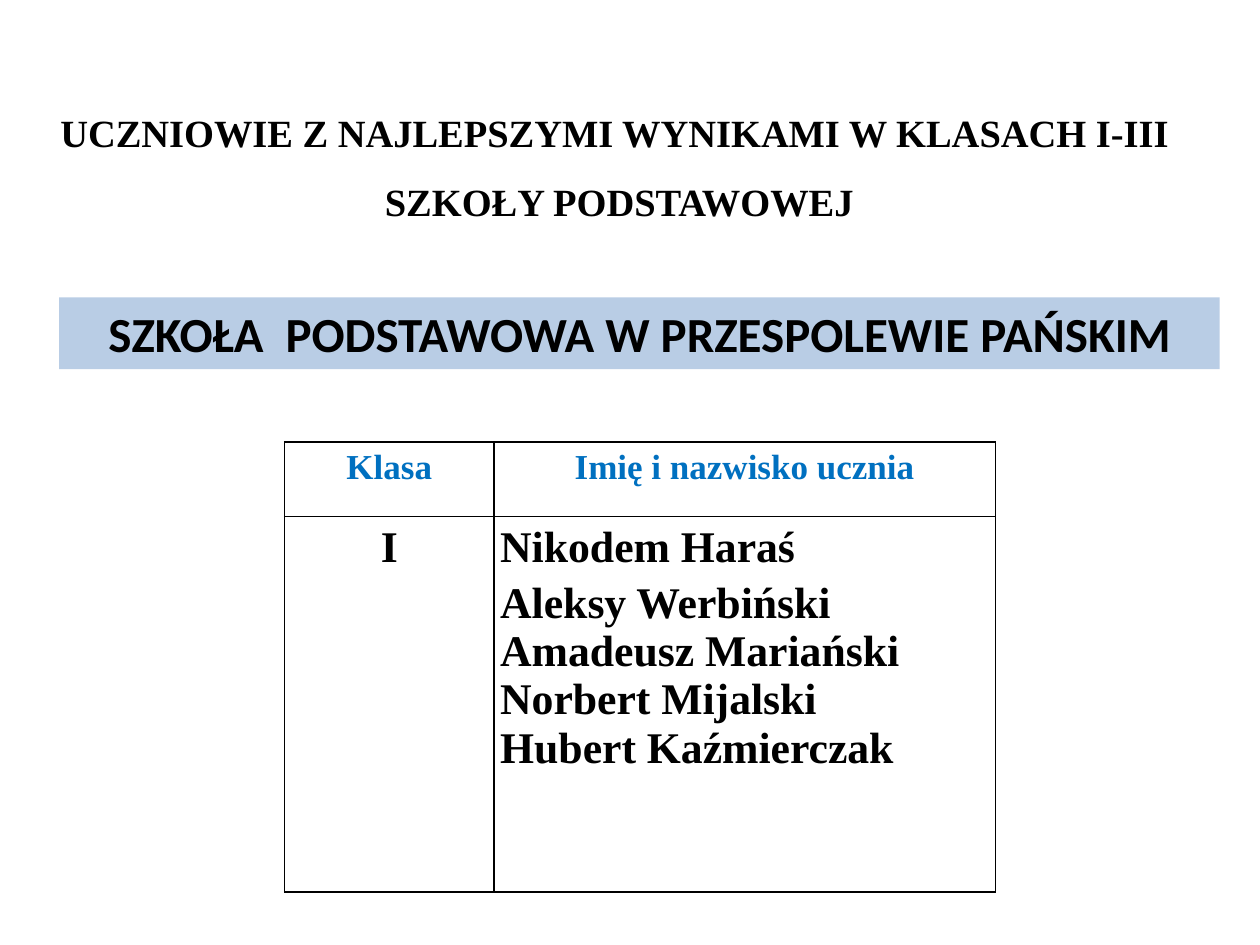
"""Build a slide listing the best pupils of a primary school."""
from lxml import etree
from pptx import Presentation
from pptx import util as u
from pptx.dml.color import RGBColor
from pptx.enum import shapes, text
from pptx.oxml.ns import qn

WIDTH, HEIGHT = 10, 7.5
SERIF = "Times New Roman"
BLACK, BLUE, BAND = "000000", "0070C0", "B9CDE5"
CENTER, LEFT = text.PP_ALIGN.CENTER, text.PP_ALIGN.LEFT

TITLE = ["UCZNIOWIE Z NAJLEPSZYMI WYNIKAMI W KLASACH I-III ", "SZKOŁY PODSTAWOWEJ"]
SCHOOL = ["SZKOŁA  PODSTAWOWA W PRZESPOLEWIE PAŃSKIM"]
HEADERS = ["Klasa", "Imię i nazwisko ucznia"]
GRADE = "I"
PUPILS = ["Nikodem Haraś", "Aleksy Werbiński", "Amadeusz Mariański",
          "Norbert Mijalski", "Hubert Kaźmierczak"]
PUPIL_SPACING = [1.15, 1.15, 1, 1, 1]

TITLE_BOX = (0.31, 0.52, 9.21, 1.31)
SCHOOL_BOX = (0.47, 2.36, 9.21, 0.57)
TABLE_ORIGIN = (2.26, 3.51)
COLUMNS, ROWS = (1.66, 3.98), (0.59, 2.98)


def color(value):
    return RGBColor.from_string(value)


def inches(values):
    return [u.Inches(value) for value in values]


def write(frame, lines, size, spacing, name=SERIF, fill=BLACK, align=CENTER):
    frame.text = "\n".join(lines)
    for paragraph, gap in zip(frame.paragraphs, spacing):
        paragraph.alignment, paragraph.line_spacing = align, gap
        font = paragraph.runs[0].font
        for key, value in {"name": name, "size": u.Pt(size), "bold": True}.items():
            setattr(font, key, value)
        font.color.rgb = color(fill)


def add_borders(cell):
    properties = cell._tc.get_or_add_tcPr()
    for index, side in enumerate(("lnL", "lnR", "lnT", "lnB")):
        line = etree.Element(qn(f"a:{side}"), w=str(u.Pt(1)))
        fill = etree.SubElement(line, qn("a:solidFill"))
        etree.SubElement(fill, qn("a:srgbClr"), val=BLACK)
        properties.insert(index, line)


def add_title(slide):
    title = slide.shapes.title
    for key, value in zip(("left", "top", "width", "height"), inches(TITLE_BOX)):
        setattr(title, key, value)
    frame = title.text_frame
    frame.auto_size = text.MSO_AUTO_SIZE.NONE
    frame.vertical_anchor = text.MSO_ANCHOR.BOTTOM
    write(frame, TITLE, 22, [1.5, 1.5])


def add_school(slide):
    band = slide.shapes.add_shape(shapes.MSO_SHAPE.RECTANGLE, *inches(SCHOOL_BOX))
    band.shadow.inherit = False
    band.fill.solid()
    band.fill.fore_color.rgb = color(BAND)
    band.line.fill.background()
    band.text_frame.vertical_anchor = text.MSO_ANCHOR.TOP
    write(band.text_frame, SCHOOL, 28, [1], name="Calibri")


def add_pupils(slide):
    box = inches((*TABLE_ORIGIN, sum(COLUMNS), sum(ROWS)))
    table = slide.shapes.add_table(len(ROWS), len(COLUMNS), *box).table
    table.first_row = table.horz_banding = False
    for column, width in zip(table.columns, COLUMNS):
        column.width = u.Inches(width)
    for row, height in zip(table.rows, ROWS):
        row.height = u.Inches(height)
    for cell in table.iter_cells():
        cell.margin_left = cell.margin_right = u.Inches(0.05)
        cell.margin_top = cell.margin_bottom = 0
        cell.fill.background()
        add_borders(cell)
    for index, header in enumerate(HEADERS):
        write(table.cell(0, index).text_frame, [header], 20, [1.15], fill=BLUE)
    write(table.cell(1, 0).text_frame, [GRADE], 25, [1.15])
    write(table.cell(1, 1).text_frame, PUPILS, 25, PUPIL_SPACING, align=LEFT)


def main():
    presentation = Presentation()
    presentation.slide_width, presentation.slide_height = inches((WIDTH, HEIGHT))
    slide = presentation.slides.add_slide(presentation.slide_layouts[5])
    add_title(slide)
    add_pupils(slide)
    add_school(slide)
    presentation.save("out.pptx")


if __name__ == "__main__":
    main()
